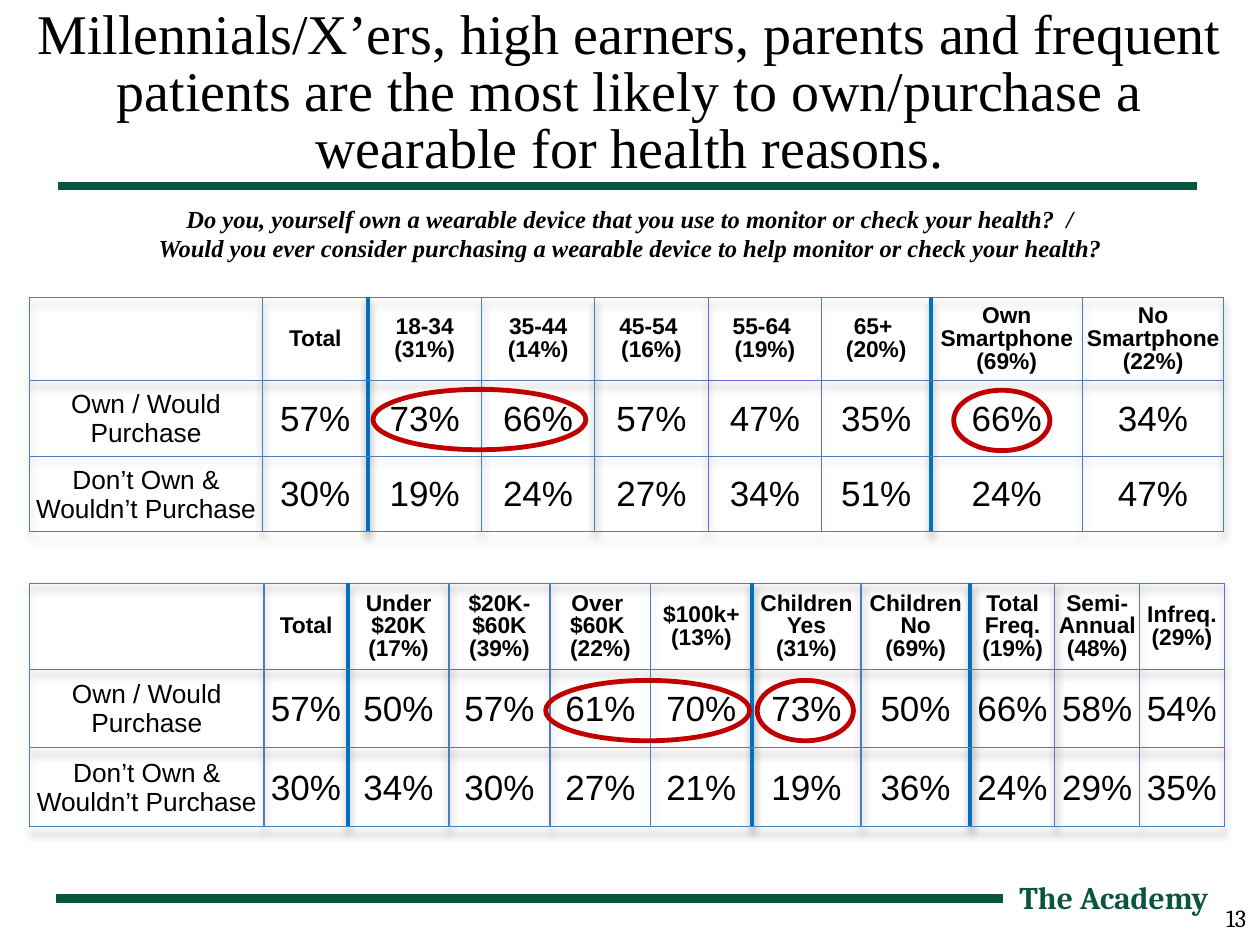
from lxml import etree
from pptx import Presentation
from pptx import util as u
from pptx.dml.color import RGBColor
from pptx.enum import shapes, text
from pptx.oxml import ns

Pt = u.Pt
HUE = {"green": "0A5540", "black": "000000", "white": "FFFFFF", "blue": "4B7EBC",
       "deep": "0070C0", "violet": "6B6BCF", "red": "C00000"}
ALIGN = text.PP_ALIGN


def rgb(name):
    return RGBColor.from_string(HUE[name])


def write(frame, lines, size, font, hue="black", bold=False, slant=False,
          align=ALIGN.CENTER, lead=None):
    frame.word_wrap = True
    for i, line in enumerate(lines.split("\n")):
        para = frame.paragraphs[0] if i == 0 else frame.add_paragraph()
        para.alignment = align
        if lead:
            para.line_spacing = lead
        run = para.add_run()
        run.text = line
        face = run.font
        face.size, face.name, face.bold, face.italic = Pt(size), font, bold, slant
        face.color.rgb = rgb(hue)


deck = Presentation()
deck.slide_width, deck.slide_height = Pt(720), Pt(540)
slide = deck.slides.add_slide(deck.slide_layouts[6])
slide.background.fill.solid()
slide.background.fill.fore_color.rgb = rgb("white")

# Title, question and footer texts
serif = "Times New Roman"
notes = [
    ((647.3, 512.6, 72, 24.5), "13", dict(size=14, font="Cambria", align=ALIGN.RIGHT)),
    ((566.6, 498.2, 131, 29), "The Academy",
     dict(size=18, font="Cambria", hue="green", bold=True, align=ALIGN.RIGHT)),
    ((0, 1.4, 720, 40.3),
     "Millennials/X’ers, high earners, parents and frequent patients are the most "
     "likely to own/purchase a wearable for health reasons.",
     dict(size=32, font=serif, lead=0.85)),
    ((36, 113, 648.7, 41),
     "Do you, yourself own a wearable device that you use to monitor or check your "
     "health?  /\nWould you ever consider purchasing a wearable device to help "
     "monitor or check your health?",
     dict(size=14, font=serif, bold=True, slant=True)),
]
for box, words, style in notes:
    write(slide.shapes.add_textbox(*map(Pt, box)).text_frame, words, **style)

# Green rules under the title and in the footer
for left, right, y, width in [(33, 684, 106.5, 4.5), (32, 573, 513.3, 5)]:
    rule = slide.shapes.add_connector(shapes.MSO_CONNECTOR.STRAIGHT,
                                      Pt(left), Pt(y), Pt(right), Pt(y))
    rule.line.color.rgb = rgb("green")
    rule.line.width = Pt(width)
    etree.SubElement(rule._element.spPr, ns.qn("a:effectLst"))

# Survey tables: thick and violet list the column edges that differ, lilac the
# column whose header cell is violet all round
grids = [
    dict(top=170, cols=[133.1, 60.3] + [64.8] * 4 + [62.5, 86.6, 80.7],
         rows=[47.4, 43.3, 43.3], thick=[2, 7], violet=[5, 6], lilac=5,
         heads=["", "Total", "18-34 (31%)", "35-44 (14%)", "45-54 \n(16%)",
                "55-64 \n(19%)", "65+ \n(20%)", "Own Smartphone (69%)",
                "No Smartphone (22%)"],
         own=[57, 73, 66, 57, 47, 35, 66, 34],
         none=[30, 19, 24, 27, 34, 51, 24, 47]),
    dict(top=333.5, cols=[134, 48] + [57.7] * 4 + [62.4] * 2 + [48.4] * 3,
         rows=[48.9, 45, 45], thick=[2, 6, 8], violet=[9, 10, 11], lilac=9,
         heads=["", "Total", "Under $20K (17%)", "$20K-$60K\n(39%)",
                "Over \n$60K \n(22%)", "$100k+\n(13%)", "Children Yes\n(31%)",
                "Children No\n(69%)", "Total Freq.\n(19%)", "Semi-Annual (48%)",
                "Infreq. (29%)"],
         own=[57, 50, 57, 61, 70, 73, 50, 66, 58, 54],
         none=[30, 34, 30, 27, 21, 19, 36, 24, 29, 35]),
]
for grid in grids:
    cols, rows = grid["cols"], grid["rows"]
    table = slide.shapes.add_table(len(rows), len(cols), Pt(16.9), Pt(grid["top"]),
                                   Pt(sum(cols)), Pt(sum(rows))).table
    table.first_row = table.horz_banding = False
    for col, width in zip(table.columns, cols):
        col.width = Pt(width)
    for row, height in zip(table.rows, rows):
        row.height = Pt(height)

    # Soft shadow below the grid
    glow = etree.SubElement(table._tbl.tblPr, ns.qn("a:effectLst"))
    table._tbl.tblPr.insert(0, glow)
    shade = etree.SubElement(glow, ns.qn("a:outerShdw"), blurRad=str(Pt(4)),
                             dist=str(Pt(3)), dir="5400000")
    tone = etree.SubElement(shade, ns.qn("a:srgbClr"), val=HUE["black"])
    etree.SubElement(tone, ns.qn("a:alpha"), val="40000")

    body = [grid["heads"],
            ["Own / Would Purchase"] + [f"{n}%" for n in grid["own"]],
            ["Don’t Own & Wouldn’t Purchase"] + [f"{n}%" for n in grid["none"]]]
    for r, line in enumerate(body):
        for c, words in enumerate(line):
            cell = table.cell(r, c)
            cell.fill.background()
            cell.vertical_anchor = text.MSO_ANCHOR.MIDDLE
            cell.margin_left = cell.margin_right = cell.margin_top = Pt(0.7)
            cell.margin_bottom = 0
            head = r == 0
            if words:
                write(cell.text_frame, words, 13 if head else 20 if c else 15, "Arial",
                      bold=head, lead=0.9 if head else None)

            # Cell borders
            flat = "violet" if head and c == grid["lilac"] else "blue"
            roof = "violet" if r == 1 and c == grid["lilac"] else flat
            sides = [("a:lnL", c, None), ("a:lnR", c + 1, None),
                     ("a:lnT", None, roof), ("a:lnB", None, flat)]
            for i, (tag, edge, hue) in enumerate(sides):
                thick = edge in grid["thick"]
                hue = hue or ("deep" if thick else
                              "violet" if edge in grid["violet"] else "blue")
                side = etree.Element(ns.qn(tag), w=str(Pt(2.25 if thick else 0.75)))
                fill = etree.SubElement(side, ns.qn("a:solidFill"))
                etree.SubElement(fill, ns.qn("a:srgbClr"), val=HUE[hue])
                cell._tc.get_or_add_tcPr().insert(i, side)

# Red rings round the highest shares
for left, top, width in [(213.1, 222.5, 121.7), (311.8, 388.8, 116.6),
                         (545, 223, 55), (432.7, 388.8, 55)]:
    ring = slide.shapes.add_shape(shapes.MSO_SHAPE.OVAL, Pt(left), Pt(top),
                                  Pt(width), Pt(34.5))
    ring.shadow.inherit = False
    ring.fill.background()
    ring.line.color.rgb = rgb("red")
    ring.line.width = Pt(2.75)

deck.save("out.pptx")
